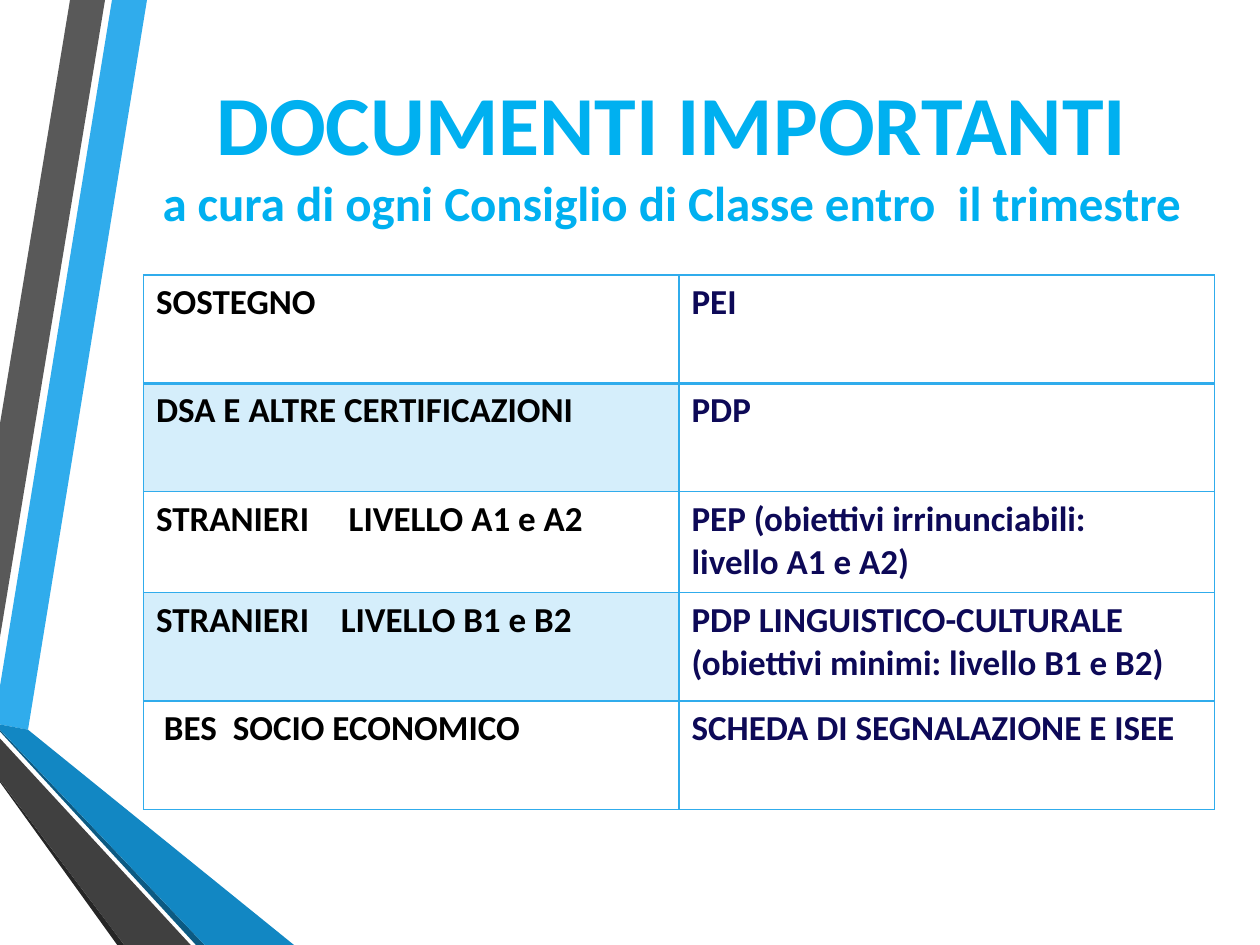
from lxml import etree
from pptx import Presentation
from pptx.dml.color import RGBColor
from pptx.enum import text
from pptx.oxml.ns import qn
from pptx.util import Pt

# Content
HEAD = "DOCUMENTI IMPORTANTI"
SUB = "a cura di ogni Consiglio di Classe entro  il trimestre"
ROWS = [
    ("SOSTEGNO", "PEI"),
    ("DSA E ALTRE CERTIFICAZIONI", "PDP"),
    ("STRANIERI     LIVELLO A1 e A2",
     "PEP (obiettivi irrinunciabili:    livello A1 e A2)"),
    ("STRANIERI    LIVELLO B1 e B2",
     "PDP LINGUISTICO-CULTURALE (obiettivi minimi: livello B1 e B2)"),
    (" BES  SOCIO ECONOMICO", "SCHEDA DI SEGNALAZIONE E ISEE"),
]

# Theme
THEME = {
    "font": "Calibri", "head": 48, "sub": 28, "cell": 20,
    "title": "00B0F0", "label": "000000", "doc": "0D0957", "line": "30ACEC",
    "tint": 20, "thin": 1, "thick": 2,
}

# Ribbons from back to front: colour and corners in points
RIBBONS = [
    ("30ACEC", [(0, 391.7), (0, 414), (15.8, 416.9), (84.5, 0), (64.1, 0)]),
    ("595959", [(59.8, 0), (39.6, 0), (0, 241.9), (0, 364.3)]),
    ("262626", [(0, 445.7), (0, 447.1), (67, 540), (71.3, 540)]),
    ("0C5A82", [(0, 416.9), (0, 417.6), (112.3, 540), (117.4, 540)]),
    ("1287C3", [(0, 416.9), (117.4, 540), (167.8, 540), (15.8, 416.9),
                (0, 414)]),
    ("404040", [(0, 445.7), (71.3, 540), (108.7, 540), (0, 421.9)]),
]

# Layout
TITLE = (59.8, 37.4, 648, 98.6)
LEFT, TOP, COL = 82, 157, 306
HIGH = [62, 62, 57.6, 62, 62]


def style(run, size, color):
    font = run.font
    font.name, font.size, font.bold = THEME["font"], Pt(size), True
    font.color.rgb = RGBColor.from_string(color)


def ribbon(slide, color, pts):
    build = slide.shapes.build_freeform(*pts[0], scale=Pt(1))
    build.add_line_segments(pts[1:], close=True)
    shape = build.convert_to_shape()
    shape.shadow.inherit = False
    shape.fill.solid()
    shape.fill.fore_color.rgb = RGBColor.from_string(color)
    shape.line.fill.background()


def paint(parent, color, alpha=None):
    fill = etree.SubElement(parent, qn("a:solidFill"))
    tone = etree.SubElement(fill, qn("a:srgbClr"), val=color)
    if alpha:
        etree.SubElement(tone, qn("a:alpha"), val=str(alpha * 1000))


def dress(cell, row, col):
    """Set borders, then fill, in the order the schema asks for."""
    props = cell._tc.get_or_add_tcPr()
    for side in "LRTB":
        bold = (side, row) in (("B", 0), ("T", 1))
        width = THEME["thick" if bold else "thin"]
        edge = etree.SubElement(props, qn("a:ln" + side), w=str(Pt(width)))
        paint(edge, THEME["line"])
    if col == 0 and row % 2:
        paint(props, THEME["line"], THEME["tint"])
    else:
        cell.fill.background()


def main():
    prs = Presentation()
    prs.slide_width, prs.slide_height = Pt(720), Pt(540)
    slide = prs.slides.add_slide(prs.slide_layouts[5])

    # Ribbons on the left edge
    for color, pts in RIBBONS:
        ribbon(slide, color, pts)

    # Title, brought in front of the ribbons
    title = slide.shapes.title
    title.left, title.top, title.width, title.height = map(Pt, TITLE)
    frame = title.text_frame
    frame.text = HEAD + "\v" + SUB
    frame.word_wrap = True
    frame.vertical_anchor = text.MSO_ANCHOR.MIDDLE
    para = frame.paragraphs[0]
    para.alignment = text.PP_ALIGN.CENTER
    for run, size in zip(para.runs, (THEME["head"], THEME["sub"])):
        style(run, size, THEME["title"])
    slide.shapes._spTree.append(title._element)

    # Table of documents
    table = slide.shapes.add_table(
        len(ROWS), 2, Pt(LEFT), Pt(TOP), Pt(2 * COL), Pt(sum(HIGH))).table
    table.first_row = table.horz_banding = False
    for r, (words, high) in enumerate(zip(ROWS, HIGH)):
        table.rows[r].height = Pt(high)
        for c, (word, tone) in enumerate(zip(words, ("label", "doc"))):
            cell = table.cell(r, c)
            cell.text_frame.text = word
            style(cell.text_frame.paragraphs[0].runs[0],
                  THEME["cell"], THEME[tone])
            dress(cell, r, c)

    prs.save("out.pptx")


if __name__ == "__main__":
    main()
